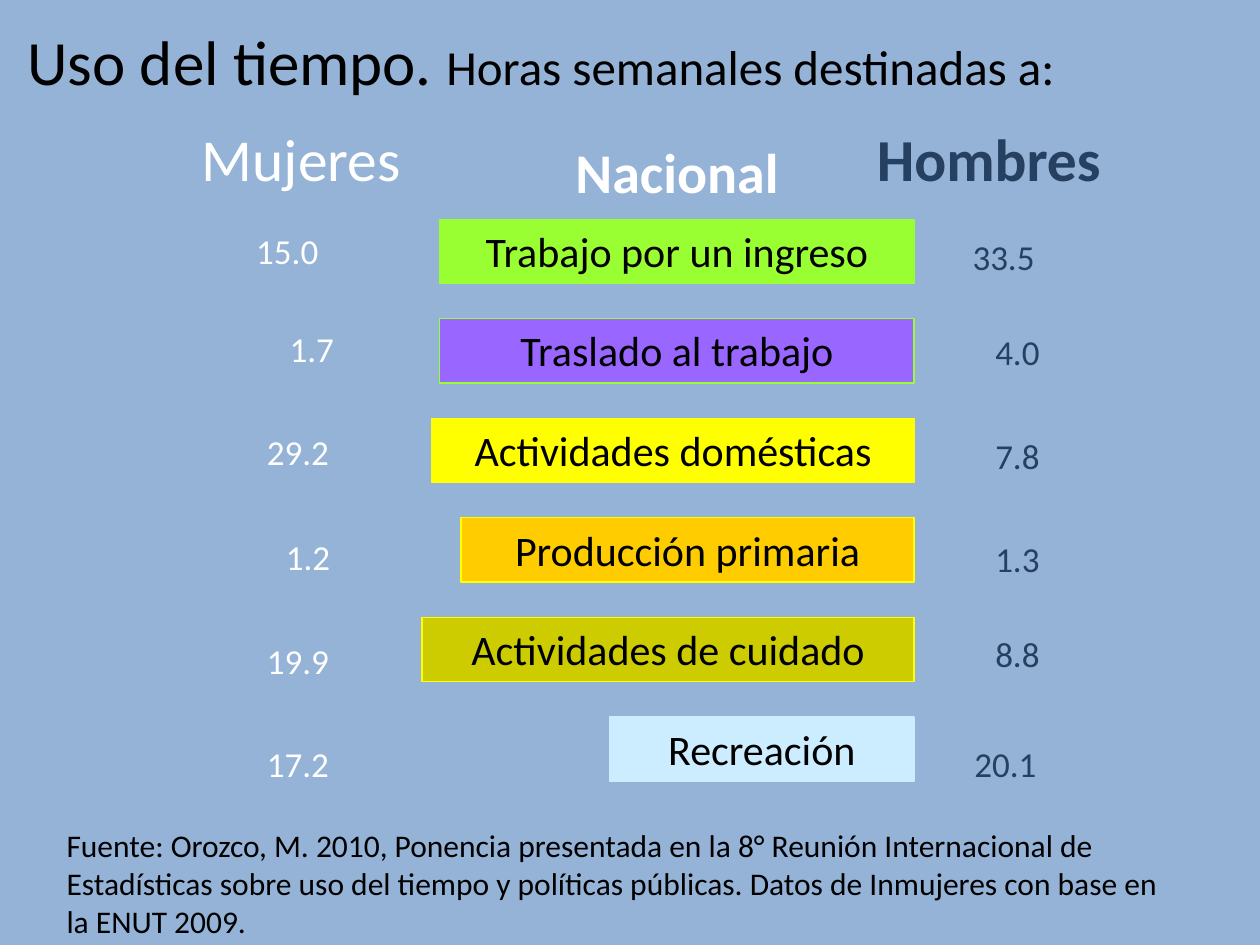
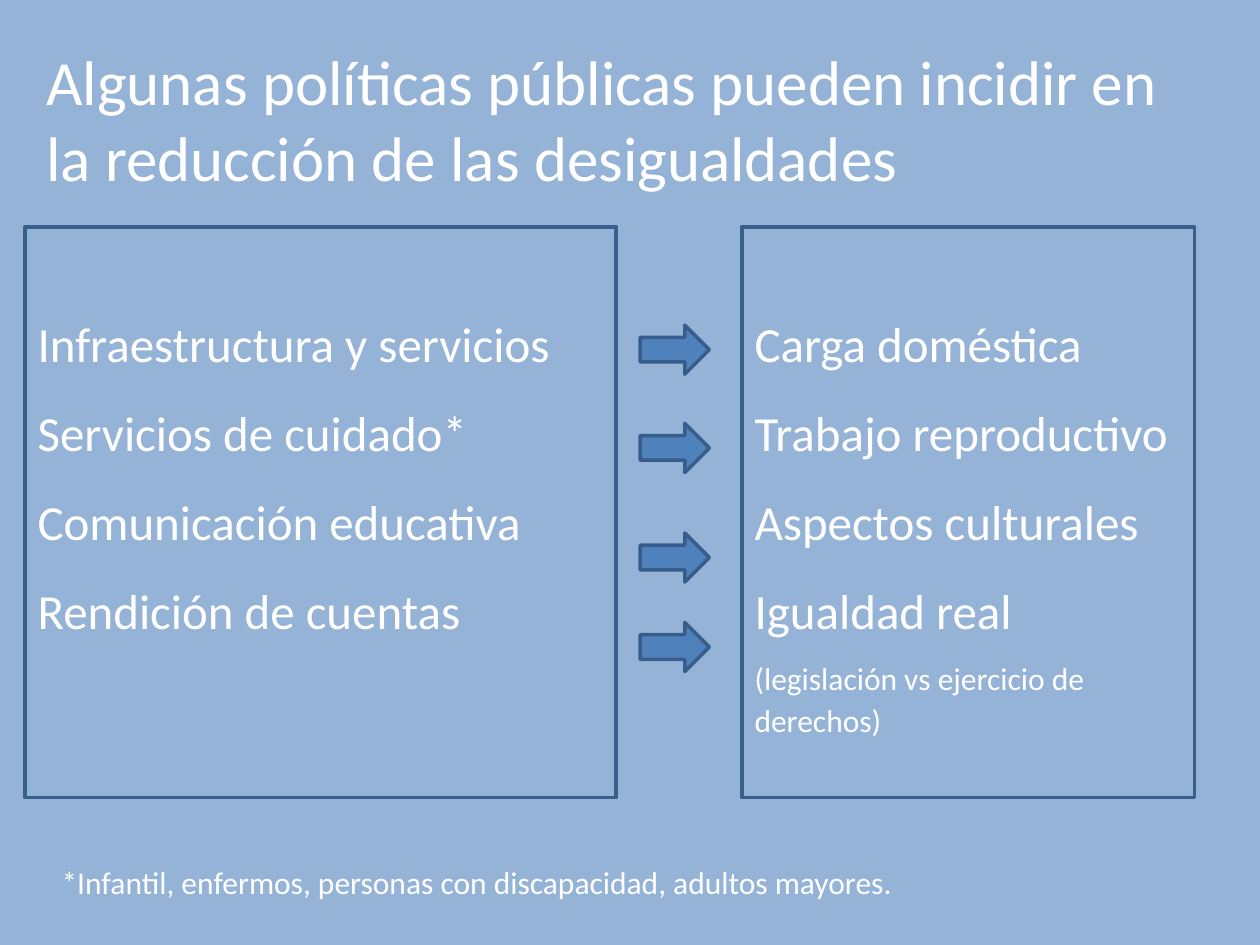
from dataclasses import dataclass
from typing import NamedTuple

from pptx import Presentation
from pptx.dml.color import RGBColor
from pptx.enum.shapes import MSO_SHAPE
from pptx.enum.text import MSO_ANCHOR, PP_ALIGN
from pptx.util import Inches, Pt

RECTANGLE = MSO_SHAPE.RECTANGLE
RIGHT_ARROW = MSO_SHAPE.RIGHT_ARROW
LEFT, CENTER = PP_ALIGN.LEFT, PP_ALIGN.CENTER
TOP = MSO_ANCHOR.TOP

# Grid: 100 columns by 75 rows
SLIDE_WIDTH, SLIDE_HEIGHT = Inches(10), Inches(7.5)
COLUMN, ROW = SLIDE_WIDTH / 100, SLIDE_HEIGHT / 75


@dataclass(frozen=True)
class Theme:
    font: str = "Calibri"
    background: str = "95B3D7"
    black: str = "000000"
    white: str = "FFFFFF"
    navy: str = "254061"
    panel_line: str = "3A5F8C"
    arrow_fill: str = "4F81BD"
    arrow_line: str = "385D8A"
    title_size: int = 36
    heading_size: int = 34
    national_size: int = 32
    item_size: int = 28
    bar_size: int = 24
    value_size: int = 20
    note_size: int = 18
    thin: float = 0.75
    thick: float = 2


THEME = Theme()


class Area(NamedTuple):
    """Left and width in columns, top and height in rows."""
    left: float
    top: float
    width: float
    height: float

    def lengths(self) -> tuple[int, int, int, int]:
        return (round(self.left * COLUMN), round(self.top * ROW),
                round(self.width * COLUMN), round(self.height * ROW))


class Span(NamedTuple):
    text: str
    size: int


class Value(NamedTuple):
    text: str
    center: float
    top: float


class Activity(NamedTuple):
    name: str
    left: float
    fill: str
    line: str
    women: Value
    men: Value


class Panel(NamedTuple):
    area: Area
    items: list[Span]


# Time use: one bar per activity, with hours on each side
BAR_TOP, BAR_STEP, BAR_HEIGHT, BAR_RIGHT = 17.4, 7.9, 5.1, 72.55
VALUE_WIDTH, VALUE_HEIGHT = 7.9, 4.3
ACTIVITIES = [
    Activity("Trabajo por un ingreso", 34.9, "99FF33", "99FF33",
             Value("15.0", 22.8, 17.7), Value("33.5", 79.65, 18.2)),
    Activity("Traslado al trabajo", 34.9, "9966FF", "99FF33",
             Value("1.7", 24.75, 25.5), Value("4.0", 80.75, 25.7)),
    Activity("Actividades domésticas", 34.3, "FFFF00", "FFFF00",
             Value("29.2", 23.65, 33.7), Value("7.8", 80.75, 34)),
    Activity("Producción primaria", 36.6, "FFCC00", "FFFF00",
             Value("1.2", 24.45, 42), Value("1.3", 80.75, 42.2)),
    Activity("Actividades de cuidado", 33.5, "CCCC00", "FFFF00",
             Value("19.9", 23.65, 50.3), Value("8.8", 80.75, 49.7)),
    Activity("Recreación", 48.4, "CCECFF", "CCECFF",
             Value("17.2", 23.65, 58.4), Value("20.1", 79.8, 58.4)),
]

# Policies: causes on the left, effects on the right
PANEL_TOP, PANEL_HEIGHT, PANEL_INSET = 18, 45.3, 6.4


def items(*texts: str) -> list[Span]:
    return [Span(text, THEME.item_size) for text in texts]


PANELS = [
    Panel(Area(2, PANEL_TOP, 46.9, PANEL_HEIGHT),
          items("Infraestructura y servicios", "Servicios de cuidado*",
                "Comunicación educativa", "Rendición de cuentas")),
    Panel(Area(58.9, PANEL_TOP, 35.9, PANEL_HEIGHT),
          items("Carga doméstica", "Trabajo reproductivo",
                "Aspectos culturales", "Igualdad real")
          + [Span("(legislación vs ejercicio de derechos)", THEME.note_size)]),
]
ARROW_TOPS = [25.8, 33.6, 42.3, 49.4]


def color(code: str) -> RGBColor:
    return RGBColor.from_string(code)


def add_span(para, span: Span, ink: str, bold: bool = False) -> None:
    run = para.add_run()
    run.text = span.text
    run.font.name = THEME.font
    run.font.size = Pt(span.size)
    run.font.bold = bold
    run.font.color.rgb = color(ink)


def write(box, text: str, *, size: int, ink: str, align=LEFT,
          bold: bool = False) -> None:
    frame = box.text_frame
    frame.word_wrap = True
    frame.vertical_anchor = TOP
    para = frame.paragraphs[0]
    para.alignment = align
    add_span(para, Span(text, size), ink, bold)


def add_text(page, area: Area, text: str, **style):
    box = page.shapes.add_textbox(*area.lengths())
    write(box, text, **style)
    return box


def add_shape(page, kind, area: Area, *, line: str, weight: float,
              fill: str | None = None):
    shape = page.shapes.add_shape(kind, *area.lengths())
    shape.shadow.inherit = False
    if fill:
        shape.fill.solid()
        shape.fill.fore_color.rgb = color(fill)
    else:
        shape.fill.background()
    shape.line.color.rgb = color(line)
    shape.line.width = Pt(weight)
    return shape


def add_heading(page, area: Area, text: str, **style) -> None:
    box = add_text(page, area, text, size=THEME.heading_size, **style)
    frame = box.text_frame
    frame.margin_left = frame.margin_right = Inches(0.14)
    frame.margin_top = frame.margin_bottom = Inches(0.07)


def add_value(page, value: Value, ink: str) -> None:
    area = Area(value.center - VALUE_WIDTH / 2, value.top,
                VALUE_WIDTH, VALUE_HEIGHT)
    add_text(page, area, value.text, size=THEME.value_size, ink=ink,
             align=CENTER)


def add_activity(page, index: int, activity: Activity) -> None:
    area = Area(activity.left, BAR_TOP + index * BAR_STEP,
                BAR_RIGHT - activity.left, BAR_HEIGHT)
    bar = add_shape(page, RECTANGLE, area, fill=activity.fill,
                    line=activity.line, weight=THEME.thin)
    write(bar, activity.name, size=THEME.bar_size, ink=THEME.black,
          align=CENTER)
    add_value(page, activity.women, THEME.white)
    add_value(page, activity.men, THEME.navy)


def add_panel(page, panel: Panel) -> None:
    box = add_shape(page, RECTANGLE, panel.area, line=THEME.panel_line,
                    weight=THEME.thick)
    frame = box.text_frame
    frame.word_wrap = True
    frame.vertical_anchor = TOP
    frame.margin_top = round(PANEL_INSET * ROW)
    for index, span in enumerate(panel.items):
        para = frame.add_paragraph() if index else frame.paragraphs[0]
        para.alignment = LEFT
        para.line_spacing = 1.1
        para.space_before = Pt(span.size / 2 if index else 0)
        add_span(para, span, THEME.white)


def add_page(deck):
    page = deck.slides.add_slide(deck.slide_layouts[6])
    page.background.fill.solid()
    page.background.fill.fore_color.rgb = color(THEME.background)
    return page


def build_time_use(deck) -> None:
    page = add_page(deck)
    # Title in two sizes
    title = add_text(page, Area(1.2, 1.3, 98.8, 7.1), "Uso del tiempo. ",
                     size=THEME.title_size, ink=THEME.black)
    add_span(title.text_frame.paragraphs[0],
             Span("Horas semanales destinadas a:", THEME.item_size),
             THEME.black)
    # Column headings
    add_heading(page, Area(13, 9, 21.8, 8.5), "Mujeres",
                ink=THEME.white, align=CENTER)
    add_text(page, Area(37, 10.4, 33.5, 6.3), "Nacional",
             size=THEME.national_size, ink=THEME.white, align=CENTER,
             bold=True)
    add_heading(page, Area(68.2, 9, 23.3, 8.5), "Hombres",
                ink=THEME.navy, bold=True)
    # Bars with their hours
    for index, activity in enumerate(ACTIVITIES):
        add_activity(page, index, activity)
    # Source
    add_text(page, Area(4.3, 65.1, 89, 10.1),
             "Fuente: Orozco, M. 2010, Ponencia presentada en la 8° Reunión "
             "Internacional de Estadísticas sobre uso del tiempo y políticas "
             "públicas. Datos de Inmujeres con base en la ENUT 2009.",
             size=THEME.note_size, ink=THEME.black)


def build_policies(deck) -> None:
    page = add_page(deck)
    add_text(page, Area(2.7, 2.9, 90.6, 13.1),
             "Algunas políticas públicas pueden incidir en la reducción "
             "de las desigualdades",
             size=THEME.title_size, ink=THEME.white)
    # Panels and the arrows between them
    for panel in PANELS:
        add_panel(page, panel)
    for top in ARROW_TOPS:
        add_shape(page, RIGHT_ARROW, Area(50.8, top, 5.5, 3.9),
                  fill=THEME.arrow_fill, line=THEME.arrow_line,
                  weight=THEME.thick)
    # Footnote
    add_text(page, Area(3.9, 68, 75, 4),
             "*Infantil, enfermos, personas con discapacidad, "
             "adultos mayores.",
             size=THEME.note_size, ink=THEME.white)


def main() -> None:
    deck = Presentation()
    deck.slide_width, deck.slide_height = SLIDE_WIDTH, SLIDE_HEIGHT
    build_time_use(deck)
    build_policies(deck)
    deck.save("out.pptx")


if __name__ == "__main__":
    main()
